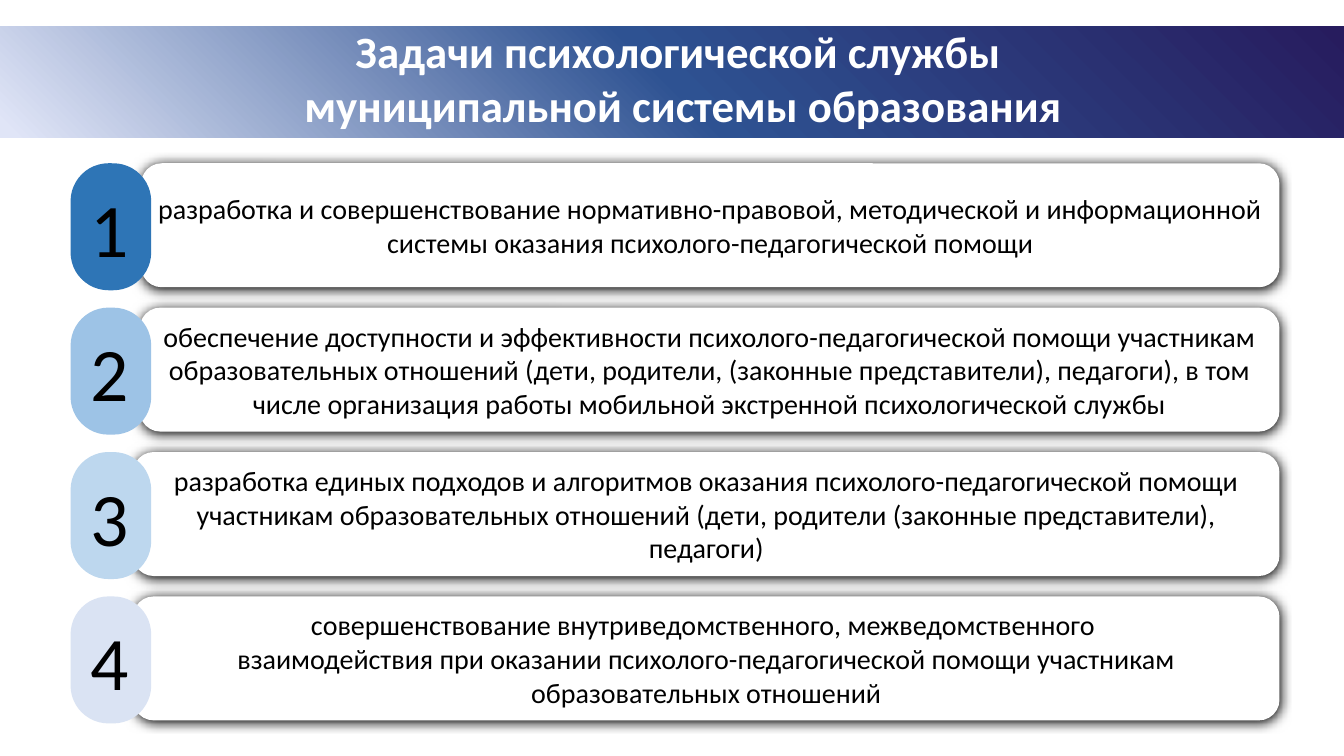
from lxml.etree import SubElement as Sub
from pptx import Presentation
from pptx.dml.color import RGBColor as Rgb
from pptx.enum.shapes import MSO_SHAPE as Kind
from pptx.enum.text import MSO_ANCHOR as Anchor, MSO_AUTO_SIZE as Fit, PP_ALIGN as Align
from pptx.oxml.ns import qn
from pptx.util import Inches, Pt

HUES = {
    "ink": "000000", "paper": "FFFFFF",
    "night": "271C5E", "navy": "2E5292", "mist": "E0E5F7",
    "one": "2E75B6", "two": "9DC3E6", "three": "BDD7EE", "four": "DAE3F3",
}

TITLE = "Задачи психологической службы \nмуниципальной системы образования"

# Pill colour, left edge of the card, wording
TASKS = [
    ("one", 10.5, "разработка и совершенствование нормативно-правовой, методической и "
     "информационной системы оказания психолого-педагогической помощи"),
    ("two", 10.4, "обеспечение доступности и эффективности психолого-педагогической помощи "
     "участникам образовательных отношений (дети, родители, (законные представители), "
     "педагоги), в том числе организация работы мобильной экстренной психологической службы"),
    ("three", 9.9, "разработка единых подходов и алгоритмов оказания "
     "психолого-педагогической помощи участникам образовательных отношений "
     "(дети, родители (законные представители), педагоги)"),
    ("four", 9.9, "совершенствование внутриведомственного, межведомственного \v"
     "взаимодействия при оказании психолого-педагогической помощи участникам "
     "образовательных отношений"),
]

# Rows of tasks, in percent of the slide's height
TOP, STEP = 21.6, 19.1
RIGHT = 95.2


class Deck:
    """Style and current slide; places are percents of the slide's size."""

    font = "Calibri"

    def __init__(self):
        self.prs = Presentation()
        self.prs.slide_width = Inches(13.33)
        self.prs.slide_height = Inches(7.5)
        self.slide = self.prs.slides.add_slide(self.prs.slide_layouts[5])
        self.shapes = self.slide.shapes

    def place(self, x, y, w, h):
        wide, high = self.prs.slide_width, self.prs.slide_height
        return [int(part * size / 100)
                for part, size in zip((x, y, w, h), (wide, high, wide, high))]

    def label(self, shape, text, size, hue="ink", bold=False, wrap=True, anchor=Anchor.TOP):
        frame = shape.text_frame
        frame.text = text
        frame.word_wrap = wrap
        frame.auto_size = Fit.NONE
        frame.vertical_anchor = anchor
        for para in frame.paragraphs:
            para.alignment = Align.CENTER
            para.font.name = self.font
            para.font.size = Pt(size)
            para.font.bold = bold
            para.font.color.rgb = Rgb.from_string(HUES[hue])

    def block(self, kind, box, hue):
        shape = self.shapes.add_shape(kind, *self.place(*box))
        shape.shadow.inherit = False
        shape.fill.solid()
        shape.fill.fore_color.rgb = Rgb.from_string(HUES[hue])
        shape.line.fill.background()
        return shape

    def band(self, box, stops):
        shape = self.block(Kind.RECTANGLE, box, "navy")
        shape.rotation = 180
        props = shape._element.spPr
        old = props.find(qn("a:solidFill"))
        grad = Sub(props, qn("a:gradFill"), rotWithShape="1")
        props.replace(old, grad)
        marks = Sub(grad, qn("a:gsLst"))
        for share, hue in stops:
            mark = Sub(marks, qn("a:gs"), pos=str(share * 1000))
            Sub(mark, qn("a:srgbClr"), val=HUES[hue])
        way = Sub(grad, qn("a:path"), path="circle")
        Sub(way, qn("a:fillToRect"), l="100000", b="100000")

    def title(self, box, text):
        head = self.shapes.title
        head.left, head.top, head.width, head.height = self.place(*box)
        self.label(head, text, 32, "paper", bold=True)
        self.shapes._spTree.append(head._element)  # bring above the band

    def card(self, box, text):
        shape = self.block(Kind.ROUNDED_RECTANGLE, box, "paper")
        glow = Sub(shape._element.spPr.find(qn("a:effectLst")), qn("a:outerShdw"),
                   blurRad=str(Pt(8.5)), dist=str(Pt(1)), dir="5400000",
                   algn="t", rotWithShape="0")
        Sub(glow, qn("a:srgbClr"), val=HUES["ink"])
        self.label(shape, text, 20, anchor=Anchor.MIDDLE)

    def pill(self, box, hue):
        shape = self.block(Kind.ROUNDED_RECTANGLE, box, hue)
        shape.adjustments[0] = 0.47

    def digit(self, box, text):
        shape = self.shapes.add_textbox(*self.place(*box))
        self.label(shape, text, 54, wrap=False)


def main():
    deck = Deck()

    # Heading
    deck.band((0, 3.5, 100, 14.7), [(0, "night"), (50, "navy"), (99, "mist")])
    deck.title((9.9, 2.5, 81.9, 15.7), TITLE)

    # Numbered tasks
    for row, (hue, left, text) in enumerate(TASKS):
        top = TOP + row * STEP
        deck.card((left, top, RIGHT - left, 16.4), text)
        deck.pill((5.25, top, 6, 16.8), hue)
        deck.digit((6, top + 1.8, 4.4, 13.5), str(row + 1))

    deck.prs.save("out.pptx")


if __name__ == "__main__":
    main()
